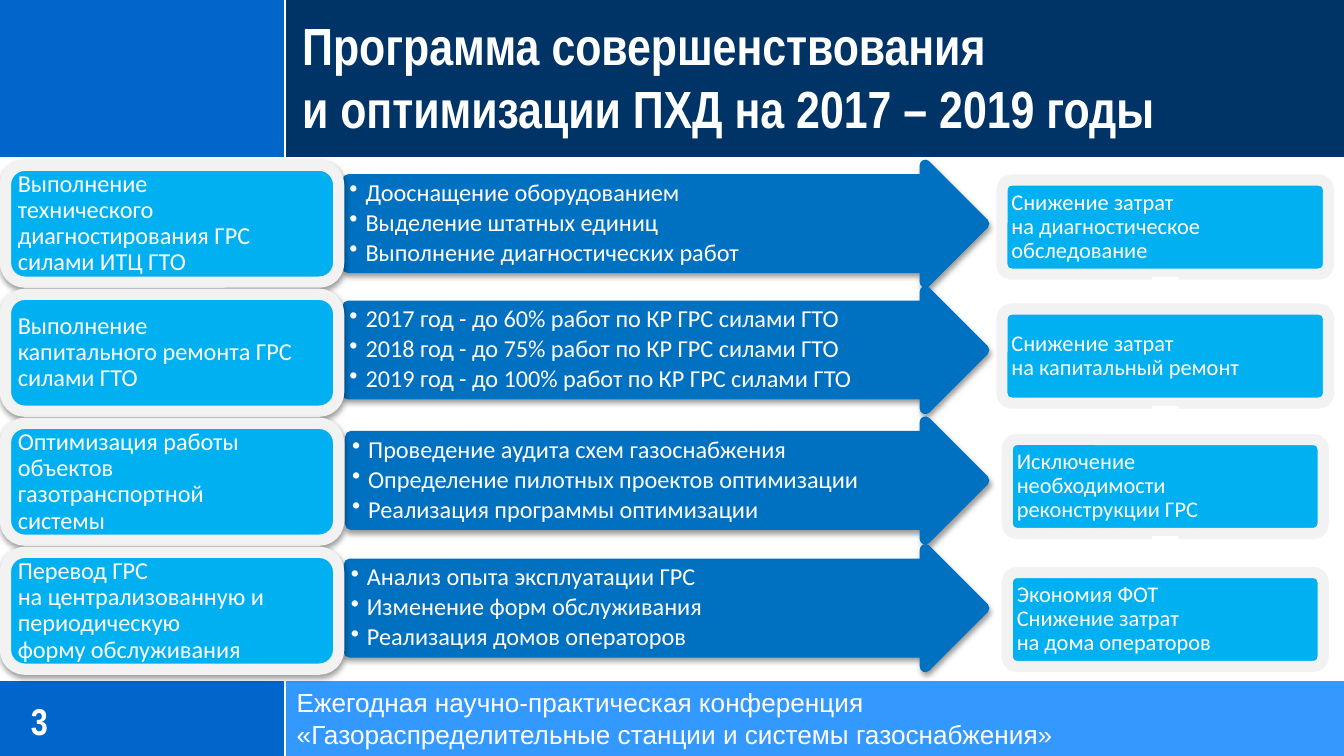
from lxml import etree
from pptx import Presentation
from pptx.dml.color import RGBColor
from pptx.enum.shapes import MSO_CONNECTOR, MSO_SHAPE
from pptx.enum.text import MSO_ANCHOR, PP_ALIGN
from pptx.oxml.ns import qn
from pptx.util import Inches, Pt

RECTANGLE = MSO_SHAPE.RECTANGLE
ROUNDED = MSO_SHAPE.ROUNDED_RECTANGLE
ARROW = MSO_SHAPE.RIGHT_ARROW
STRAIGHT = MSO_CONNECTOR.STRAIGHT
TOP, MIDDLE = MSO_ANCHOR.TOP, MSO_ANCHOR.MIDDLE
LEFT = PP_ALIGN.LEFT

WHITE = RGBColor(0xFF, 0xFF, 0xFF)
NAVY = RGBColor(0x00, 0x33, 0x66)
BLUE = RGBColor(0x00, 0x66, 0xCC)
LIGHT_BLUE = RGBColor(0x33, 0x99, 0xFF)
ARROW_BLUE = RGBColor(0x00, 0x70, 0xC0)
CARD_BLUE = RGBColor(0x00, 0xB0, 0xF0)
FRAME_GRAY = RGBColor(0xF2, 0xF2, 0xF2)

WIDTH, HEIGHT = 10, 5.625
SPLIT = 2.12  # boundary between the left and right bands

TASKS = [
    "Выполнение\nтехнического\nдиагностирования ГРС\nсилами ИТЦ ГТО",
    "Выполнение\nкапитального ремонта ГРС силами ГТО",
    "Оптимизация работы\nобъектов\nгазотранспортной\nсистемы",
    "Перевод ГРС\nна централизованную и периодическую\nформу обслуживания",
]
# Left, top and bullet points of each arrow
MEASURES = [
    (2.59, 1.23, ["Дооснащение оборудованием", "Выделение штатных единиц",
                  "Выполнение диагностических работ"]),
    (2.59, 2.17, ["2017 год - до 60% работ по КР ГРС силами ГТО",
                  "2018 год - до 75% работ по КР ГРС силами ГТО",
                  "2019 год - до 100% работ по КР ГРС силами ГТО"]),
    (2.61, 3.14, ["Проведение аудита схем газоснабжения",
                  "Определение пилотных проектов оптимизации",
                  "Реализация программы оптимизации"]),
    (2.6, 4.09, ["Анализ опыта эксплуатации ГРС", "Изменение форм обслуживания",
                 "Реализация домов операторов"]),
]
# Top, width and text of each result
RESULTS = [
    (1.34, 2.43, "Снижение затрат\nна диагностическое\nобследование"),
    (2.3, 2.43, "Снижение затрат\nна капитальный ремонт"),
    (3.27, 2.35, "Исключение\nнеобходимости\nреконструкции ГРС"),
    (4.26, 2.35, "Экономия ФОТ\nСнижение затрат\nна дома операторов"),
]


def add_block(slide, kind, box, fill, line=None, line_width=6):
    shape = slide.shapes.add_shape(kind, *map(Inches, box))
    shape.shadow.inherit = False
    shape.fill.solid()
    shape.fill.fore_color.rgb = fill
    if line is None:
        shape.line.fill.background()
    else:
        shape.line.color.rgb = line
        shape.line.width = Pt(line_width)
    return shape


def add_soft_shadow(shape):
    effects = shape._element.spPr.find(qn("a:effectLst"))
    shadow = etree.SubElement(effects, qn("a:outerShdw"), blurRad="40000", dist="20000",
                              dir="5400000", rotWithShape="0")
    color = etree.SubElement(shadow, qn("a:srgbClr"), val="000000")
    etree.SubElement(color, qn("a:alpha"), val="38000")


def add_rule(slide, x1, y1, x2, y2):
    rule = slide.shapes.add_connector(STRAIGHT, *map(Inches, (x1, y1, x2, y2)))
    rule.line.color.rgb = WHITE
    rule.line.width = Pt(1.25)
    etree.SubElement(rule._element.spPr, qn("a:effectLst"))


def add_bullet(paragraph):
    properties = paragraph._p.get_or_add_pPr()
    properties.set("marL", str(Inches(0.12)))
    properties.set("indent", str(-Inches(0.12)))
    etree.SubElement(properties, qn("a:buChar"), char="•")


def write(shape, texts, size, font, insets=(0.1, 0.05), anchor=MIDDLE,
          bold=False, spacing=None, bullets=False):
    frame = shape.text_frame
    frame.word_wrap = True
    frame.vertical_anchor = anchor
    frame.margin_left = frame.margin_right = Inches(insets[0])
    frame.margin_top = frame.margin_bottom = Inches(insets[1])
    for index, text in enumerate(texts):
        paragraph = frame.add_paragraph() if index else frame.paragraphs[0]
        paragraph.alignment = LEFT
        if bullets:
            add_bullet(paragraph)
            paragraph.space_after = Pt(2)
        if spacing:
            paragraph.line_spacing = spacing
        for number, line in enumerate(text.split("\n")):
            if number:
                paragraph.add_line_break()
            run = paragraph.add_run()
            run.text = line
            run.font.size = Pt(size)
            run.font.name = font
            run.font.bold = bold
            run.font.color.rgb = WHITE
        # Line breaks take their height from the paragraph's own size
        paragraph.font.size = Pt(size)


def add_text(slide, box, texts, size, font, **options):
    write(slide.shapes.add_textbox(*map(Inches, box)), texts, size, font, **options)


def add_header(slide, height):
    add_block(slide, RECTANGLE, (SPLIT, 0, WIDTH - SPLIT, height), NAVY)
    add_block(slide, RECTANGLE, (0, 0, SPLIT, height), BLUE)
    add_rule(slide, SPLIT, 0, SPLIT, height)
    add_rule(slide, 0, height, WIDTH, height)
    add_text(slide, (2.15, 0.05, 7.85, 1.04),
             ["Программа совершенствования\nи оптимизации ПХД на 2017 – 2019 годы"],
             28, "Arial Narrow", anchor=TOP, bold=True)


def add_footer(slide, top):
    height = HEIGHT - top
    add_block(slide, RECTANGLE, (0, top, SPLIT, height), BLUE)
    add_block(slide, RECTANGLE, (SPLIT, top, WIDTH - SPLIT, height), LIGHT_BLUE)
    add_rule(slide, SPLIT, top, SPLIT, HEIGHT)
    add_rule(slide, 0, top, WIDTH, top)
    add_text(slide, (0.23, top + 0.04, 1.62, 0.52), ["3"], 20, "Arial Narrow",
             insets=(0, 0), bold=True)
    add_text(slide, (2.11, top, 7.87, 0.57),
             ["Ежегодная научно-практическая конференция",
              "«Газораспределительные станции и системы газоснабжения»"],
             14, "Arial", anchor=TOP)


def add_measure(slide, left, top, right, height, points):
    arrow = add_block(slide, ARROW, (left, top, right - left, height), ARROW_BLUE, ARROW_BLUE)
    arrow.adjustments[0] = 0.75
    add_soft_shadow(arrow)
    write(arrow, points, 13, "Calibri", insets=(0.01, 0.01), spacing=0.9, bullets=True)


def add_task(slide, left, top, width, height, text):
    card = add_block(slide, ROUNDED, (left, top, width, height), CARD_BLUE, FRAME_GRAY)
    add_soft_shadow(card)
    write(card, [text], 13, "Calibri", insets=(0.05, 0.03), spacing=0.9)


def add_results(slide, center, height):
    for index, (top, width, text) in enumerate(RESULTS):
        card = add_block(slide, ROUNDED, (center - width / 2, top, width, height),
                         CARD_BLUE, FRAME_GRAY)
        card.adjustments[0] = 0.1
        write(card, [text], 12, "Calibri", insets=(0.05, 0.05), spacing=0.9)
        # Arrow down to the next result
        if index < len(RESULTS) - 1:
            arrow = add_block(slide, ARROW, (center - 0.1, top + 0.67, 0.2, 0.31),
                              WHITE, WHITE, 0.75)
            arrow.adjustments[0] = 0.6
            arrow.rotation = 90


def main():
    presentation = Presentation()
    presentation.slide_width = Inches(WIDTH)
    presentation.slide_height = Inches(HEIGHT)
    slide = presentation.slides.add_slide(presentation.slide_layouts[6])
    add_footer(slide, 5.06)
    add_header(slide, 1.18)
    for index, (task, (left, top, points)) in enumerate(zip(TASKS, MEASURES)):
        add_measure(slide, left, top, 7.32, 0.87, points)
        add_task(slide, 0.04, 1.23 + 0.96 * index, 2.48, 0.87, task)
    add_results(slide, 8.67, 0.7)
    presentation.save("out.pptx")


if __name__ == "__main__":
    main()
